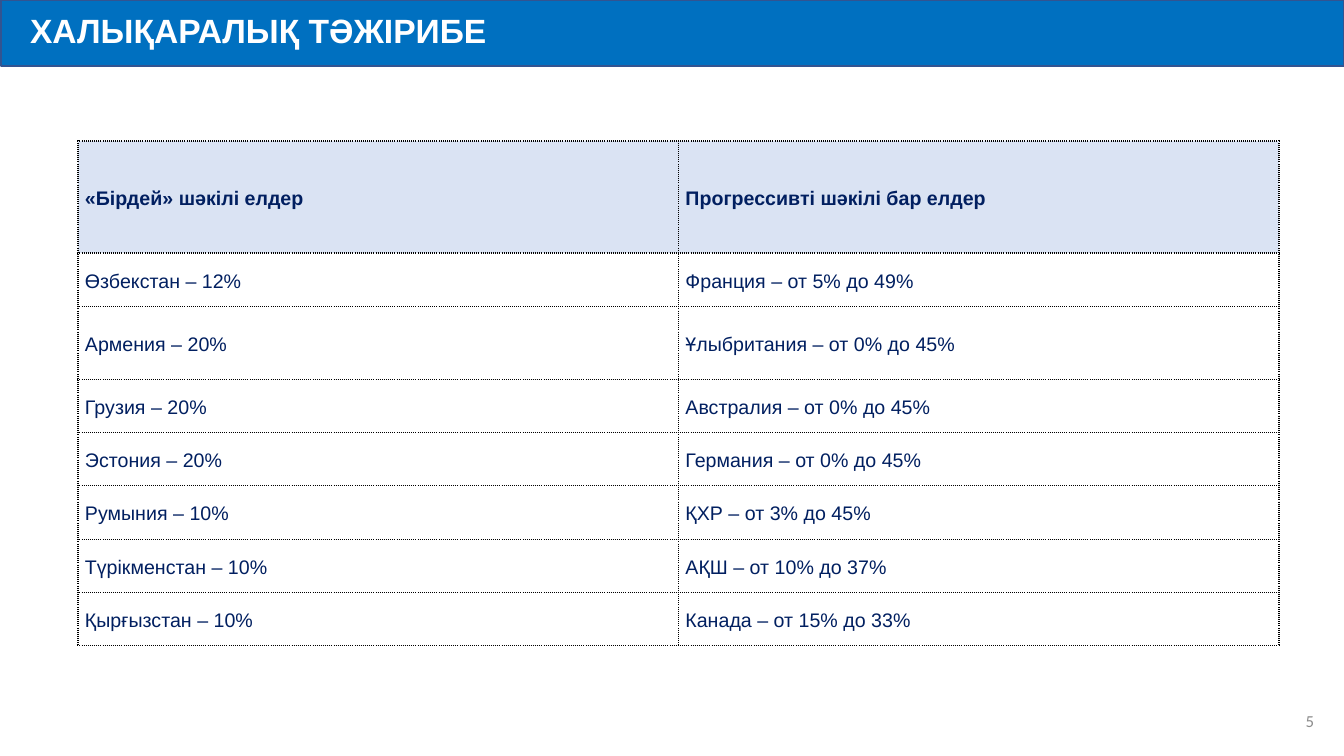
"""Builds a slide comparing countries with flat and progressive tax scales."""
from lxml import etree
from pptx import Presentation
from pptx.dml.color import RGBColor
from pptx.enum.shapes import MSO_SHAPE
from pptx.enum.text import MSO_ANCHOR, PP_ALIGN
from pptx.oxml.ns import qn
from pptx.util import Pt

RECTANGLE = MSO_SHAPE.RECTANGLE
MIDDLE = MSO_ANCHOR.MIDDLE
LEFT, RIGHT, JUSTIFY = PP_ALIGN.LEFT, PP_ALIGN.RIGHT, PP_ALIGN.JUSTIFY
EMU_PER_PX = 12192000 / 1344

COLORS = {
    "banner": "0070C0",
    "banner_line": "325491",
    "white": "FFFFFF",
    "header": "DAE3F3",
    "text": "011F60",
    "border": "000000",
    "number": "8C8C8C",
}

COUNTRIES = [
    ("«Бірдей» шәкілі елдер", "Прогрессивті шәкілі бар елдер"),
    ("Өзбекстан – 12%", "Франция – от 5% до 49%"),
    ("Армения – 20%", "Ұлыбритания – от 0% до 45%"),
    ("Грузия – 20%", "Австралия – от 0% до 45%"),
    ("Эстония – 20%", "Германия – от 0% до 45%"),
    ("Румыния – 10%", "ҚХР – от 3% до 45%"),
    ("Түрікменстан – 10%", "АҚШ – от 10% до 37%"),
    ("Қырғызстан – 10%", "Канада – от 15% до 33%"),
]
TALL_ROWS = {0: 112, 2: 73}


def px(length):
    return round(length * EMU_PER_PX)


def color(name):
    return RGBColor.from_string(COLORS[name])


def write(frame, text, size, color_name, font="Arial", bold=False, align=LEFT, spacing=1.0):
    paragraph = frame.paragraphs[0]
    paragraph.text = text
    paragraph.alignment = align
    paragraph.line_spacing = spacing
    paragraph.font.name = font
    paragraph.font.size = Pt(size)
    paragraph.font.bold = bold
    paragraph.font.color.rgb = color(color_name)


def add_banner(slide, left, top, width, height):
    banner = slide.shapes.add_shape(RECTANGLE, px(left), px(top), px(width), px(height))
    banner.shadow.inherit = False
    banner.fill.solid()
    banner.fill.fore_color.rgb = color("banner")
    banner.line.color.rgb = color("banner_line")
    banner.line.width = Pt(1)
    frame = banner.text_frame
    frame.word_wrap = True
    frame.vertical_anchor = MIDDLE
    frame.margin_left = px(29)
    write(frame, "ХАЛЫҚАРАЛЫҚ ТӘЖІРИБЕ", 24, "white", bold=True, spacing=0.9)


def add_dotted_borders(cell):
    properties = cell._tc.get_or_add_tcPr()
    for position, side in enumerate(("lnL", "lnR", "lnT", "lnB")):
        line = etree.Element(qn(f"a:{side}"), w=str(Pt(1)))
        fill = etree.SubElement(line, qn("a:solidFill"))
        etree.SubElement(fill, qn("a:srgbClr"), val=COLORS["border"])
        etree.SubElement(line, qn("a:prstDash"), val="sysDot")
        properties.insert(position, line)


def add_country_table(slide, left, top, width, height):
    row_count, column_count = len(COUNTRIES), len(COUNTRIES[0])
    table = slide.shapes.add_table(
        row_count, column_count, px(left), px(top), px(width), px(height)
    ).table
    for column in table.columns:
        column.width = px(width / column_count)
    plain_height = (height - sum(TALL_ROWS.values())) / (row_count - len(TALL_ROWS))
    for row_index, texts in enumerate(COUNTRIES):
        table.rows[row_index].height = px(TALL_ROWS.get(row_index, plain_height))
        is_header = row_index == 0
        for column_index, text in enumerate(texts):
            cell = table.cell(row_index, column_index)
            cell.vertical_anchor = MIDDLE
            cell.margin_left = cell.margin_right = px(7)
            cell.margin_top = cell.margin_bottom = 0
            cell.fill.solid()
            cell.fill.fore_color.rgb = color("header" if is_header else "white")
            add_dotted_borders(cell)
            write(cell.text_frame, text, 14, "text", bold=is_header, align=JUSTIFY, spacing=1.15)


def add_page_number(slide, left, top, width, height):
    box = slide.shapes.add_textbox(px(left), px(top), px(width), px(height))
    frame = box.text_frame
    frame.word_wrap = True
    frame.vertical_anchor = MIDDLE
    write(frame, "5", 12, "number", font="Calibri", align=RIGHT)


def main():
    presentation = Presentation()
    presentation.slide_width, presentation.slide_height = px(1344), px(756)
    slide = presentation.slides.add_slide(presentation.slide_layouts[6])
    add_banner(slide, 1, 0, 1343, 66)
    add_country_table(slide, 78, 141, 1201, 505)
    add_page_number(slide, 1022, 701, 302, 40)
    presentation.save("out.pptx")


if __name__ == "__main__":
    main()
